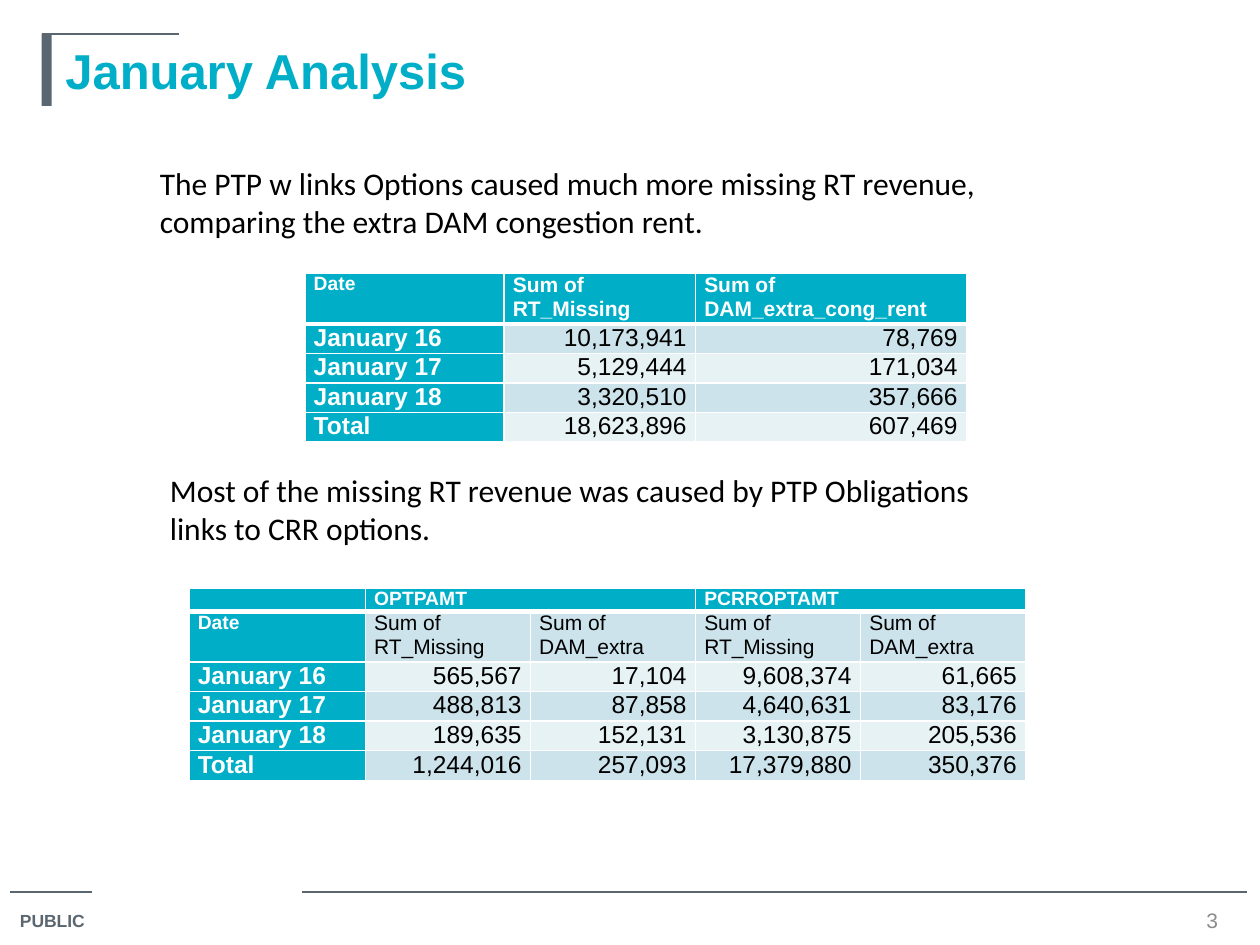
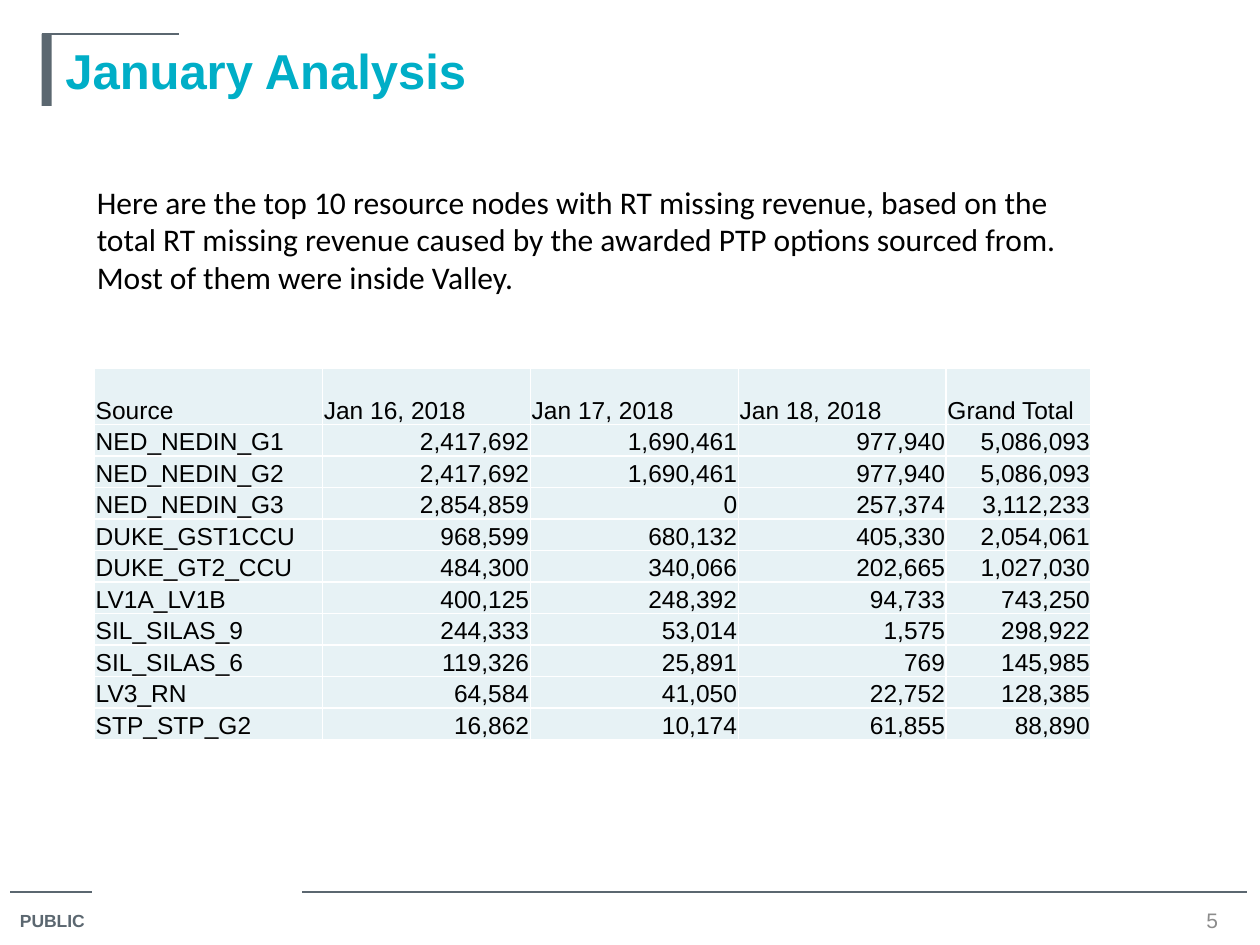
from dataclasses import dataclass
from lxml.etree import SubElement
from pptx import Presentation
from pptx.dml.color import RGBColor
from pptx.enum.shapes import MSO_CONNECTOR, MSO_SHAPE
from pptx.enum.text import MSO_ANCHOR, PP_ALIGN
from pptx.oxml import parse_xml
from pptx.oxml.ns import nsdecls, qn
from pptx.util import Inches, Pt


@dataclass(frozen=True)
class Theme:
    teal: str = "00AEC7"
    slate: str = "5B6770"
    gray: str = "8C8C8C"
    white: str = "FFFFFF"
    black: str = "000000"
    band: str = "CCE3EB"
    pale: str = "E7F2F5"
    sans: str = "Arial"
    body: str = "Calibri"
    title: int = 28
    note: int = 18
    cell: int = 14
    head: int = 12
    label: int = 11
    page: int = 12
    foot: int = 10


THEME = Theme()
DAYS = ["January 16", "January 17", "January 18", "Total"]

SUMS = [
    ["Date", "Sum of RT_Missing", "Sum of DAM_extra_cong_rent"],
    [DAYS[0], "10,173,941", "78,769"],
    [DAYS[1], "5,129,444", "171,034"],
    [DAYS[2], "3,320,510", "357,666"],
    [DAYS[3], "18,623,896", "607,469"],
]
SPLIT = [
    ["", "OPTPAMT", "", "PCRROPTAMT", ""],
    ["Date"] + ["Sum of RT_Missing", "Sum of DAM_extra"] * 2,
    [DAYS[0], "565,567", "17,104", "9,608,374", "61,665"],
    [DAYS[1], "488,813", "87,858", "4,640,631", "83,176"],
    [DAYS[2], "189,635", "152,131", "3,130,875", "205,536"],
    [DAYS[3], "1,244,016", "257,093", "17,379,880", "350,376"],
]
NODES = [
    ["Source", "Jan 16, 2018", "Jan 17, 2018", "Jan 18, 2018", "Grand Total"],
    ["NED_NEDIN_G1", "2,417,692", "1,690,461", "977,940", "5,086,093"],
    ["NED_NEDIN_G2", "2,417,692", "1,690,461", "977,940", "5,086,093"],
    ["NED_NEDIN_G3", "2,854,859", "0", "257,374", "3,112,233"],
    ["DUKE_GST1CCU", "968,599", "680,132", "405,330", "2,054,061"],
    ["DUKE_GT2_CCU", "484,300", "340,066", "202,665", "1,027,030"],
    ["LV1A_LV1B", "400,125", "248,392", "94,733", "743,250"],
    ["SIL_SILAS_9", "244,333", "53,014", "1,575", "298,922"],
    ["SIL_SILAS_6", "119,326", "25,891", "769", "145,985"],
    ["LV3_RN", "64,584", "41,050", "22,752", "128,385"],
    ["STP_STP_G2", "16,862", "10,174", "61,855", "88,890"],
]


def color(code):
    return RGBColor.from_string(code)


def style(para, size, ink, bold=False, face=THEME.sans):
    for run in para.runs:
        font = run.font
        font.name, font.size, font.bold = face, Pt(size), bold
        font.color.rgb = color(ink)


# Basic elements
def add_text(slide, box, text, size, ink, bold=False, face=THEME.sans,
             align=PP_ALIGN.LEFT, anchor=MSO_ANCHOR.TOP):
    frame = slide.shapes.add_textbox(*map(Inches, box)).text_frame
    frame.word_wrap = True
    frame.vertical_anchor = anchor
    frame.text = text
    para = frame.paragraphs[0]
    para.alignment = align
    style(para, size, ink, bold, face)


def add_note(slide, box, text):
    add_text(slide, box, text, THEME.note, THEME.black, face=THEME.body)


def add_rule(slide, left, right, top):
    line = slide.shapes.add_connector(
        MSO_CONNECTOR.STRAIGHT, Inches(left), Inches(top), Inches(right), Inches(top))
    line.line.color.rgb = color(THEME.slate)
    line.line.width = Pt(0.75)
    SubElement(line._element.spPr, qn("a:effectLst"))


# Tables
def add_edges(cell, top, base):
    props = cell._tc.get_or_add_tcPr()
    edges = [("lnL", 1), ("lnR", 1), ("lnT", top), ("lnB", base)]
    for spot, (tag, width) in enumerate(edges):
        props.insert(spot, parse_xml(
            f'<a:{tag} {nsdecls("a")} w="{Pt(width)}"><a:solidFill>'
            f'<a:srgbClr val="{THEME.white}"/></a:solidFill></a:{tag}>'))


def fill_cell(cell, text, size, ink, fill, bold, right):
    cell.text = text
    para = cell.text_frame.paragraphs[0]
    para.alignment = PP_ALIGN.RIGHT if right else PP_ALIGN.LEFT
    style(para, size, ink, bold)
    if not text:
        SubElement(para._p, qn("a:endParaRPr"), sz=str(size * 100))
    cell.fill.solid()
    cell.fill.fore_color.rgb = color(fill)


def add_grid(slide, left, top, cols, rows, data):
    size = map(Inches, (left, top, sum(cols), sum(rows)))
    table = slide.shapes.add_table(len(rows), len(cols), *size).table
    table.first_row = table.horz_banding = False
    for col, width in zip(table.columns, cols):
        col.width = Inches(width)
    for row, height in zip(table.rows, rows):
        row.height = Inches(height)
    cells = [(r, c, table.cell(r, c), text)
             for r, line in enumerate(data) for c, text in enumerate(line)]
    return table, cells


def add_bands(slide, left, top, cols, rows, data, heads):
    table, cells = add_grid(slide, left, top, cols, rows, data)
    for r, c, cell, text in cells:
        key = r == 0 or c == 0
        if r >= heads:
            size = THEME.cell
        else:
            size = THEME.head if c and r == heads - 1 else THEME.label
        fill = THEME.teal if key else (THEME.band if r % 2 else THEME.pale)
        fill_cell(cell, text, size, THEME.white if key else THEME.black,
                  fill, key, c > 0 and r >= heads)
        cell.margin_left = cell.margin_right = Inches(0.07)
        cell.margin_top = cell.margin_bottom = 0
        add_edges(cell, 3 if r == 1 else 1, 3 if r == 0 else 1)
    return table


def add_list(slide, left, top, cols, rows, data):
    _, cells = add_grid(slide, left, top, cols, rows, data)
    for r, c, cell, text in cells:
        fill_cell(cell, text, THEME.cell, THEME.black, THEME.pale, False, r > 0 and c > 0)
        cell.vertical_anchor = MSO_ANCHOR.BOTTOM
        cell.margin_left = cell.margin_right = cell.margin_top = Inches(0.01)
        cell.margin_bottom = 0
        add_edges(cell, 1, 1)


# Shared frame: footer, title mark, title and page number
def add_page(deck, title, page):
    slide = deck.slides.add_slide(deck.slide_layouts[6])
    add_rule(slide, 0.08, 0.73, 7.08)
    add_rule(slide, 2.4, 9.9, 7.08)
    add_text(slide, (0.06, 7.17, 0.77, 0.28), "PUBLIC", THEME.foot, THEME.slate, True)
    bar = slide.shapes.add_shape(
        MSO_SHAPE.RECTANGLE, *map(Inches, (0.33, 0.27, 0.08, 0.57)))
    bar.shadow.inherit = False
    bar.fill.solid()
    bar.fill.fore_color.rgb = color(THEME.slate)
    bar.line.fill.background()
    add_rule(slide, 0.33, 1.42, 0.27)
    add_text(slide, (0.42, 0.27, 9.25, 0.57), title, THEME.title, THEME.teal, True)
    add_text(slide, (9.33, 7.18, 0.58, 0.24), str(page), THEME.page, THEME.gray,
             align=PP_ALIGN.CENTER, anchor=MSO_ANCHOR.MIDDLE)
    return slide


def add_totals(deck):
    slide = add_page(deck, "January Analysis", 3)
    add_bands(slide, 2.42, 2.17, [1.58, 1.52, 2.15], [0.37] + [0.22] * 4, SUMS, 1)
    add_note(slide, (1.17, 1.25, 7.08, 0.71),
             "The PTP w links Options caused much more missing RT revenue, "
             "comparing the extra DAM congestion rent.")
    table = add_bands(slide, 1.5, 4.67, [1.4] + [1.31] * 4,
                      [0.18, 0.4] + [0.235] * 4, SPLIT, 2)
    for c in (1, 3):
        table.cell(0, c).merge(table.cell(0, c + 1))
    add_note(slide, (1.25, 3.69, 6.67, 0.71),
             "Most of the missing RT revenue was caused by PTP Obligations "
             "links to CRR options.")


def add_nodes(deck):
    slide = add_page(deck, "January Analysis", 5)
    add_list(slide, 0.75, 2.92, [1.81] + [1.65] * 3 + [1.15],
             [0.45] + [0.25] * 10, NODES)
    add_note(slide, (0.67, 1.4, 8, 1.01),
             "Here are the top 10 resource nodes with RT missing revenue, based on "
             "the total RT missing revenue caused by the awarded PTP options sourced "
             "from. Most of them were inside Valley.")


def main():
    deck = Presentation()
    deck.slide_width, deck.slide_height = Inches(10), Inches(7.5)
    add_totals(deck)
    add_nodes(deck)
    deck.save("out.pptx")


if __name__ == "__main__":
    main()
